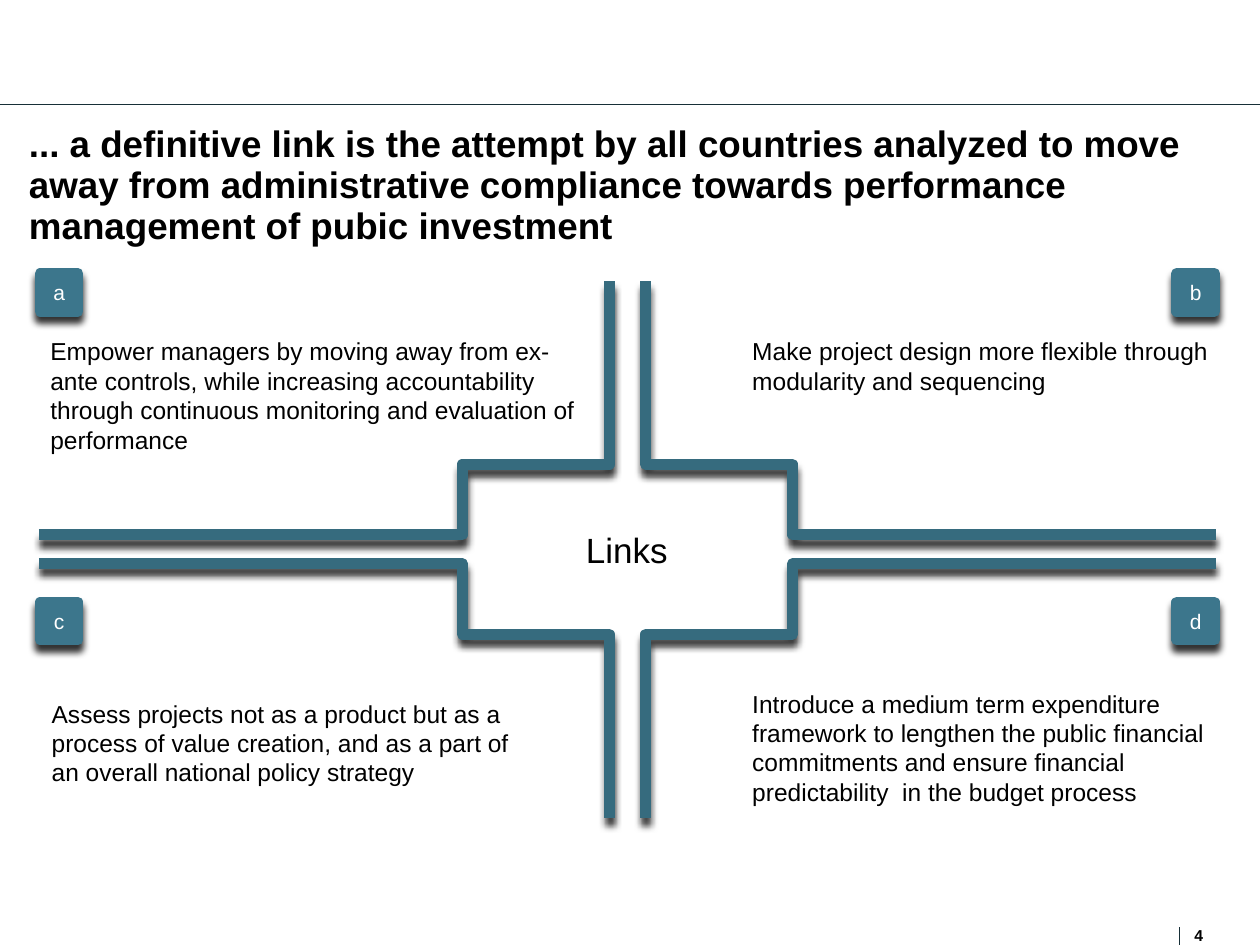
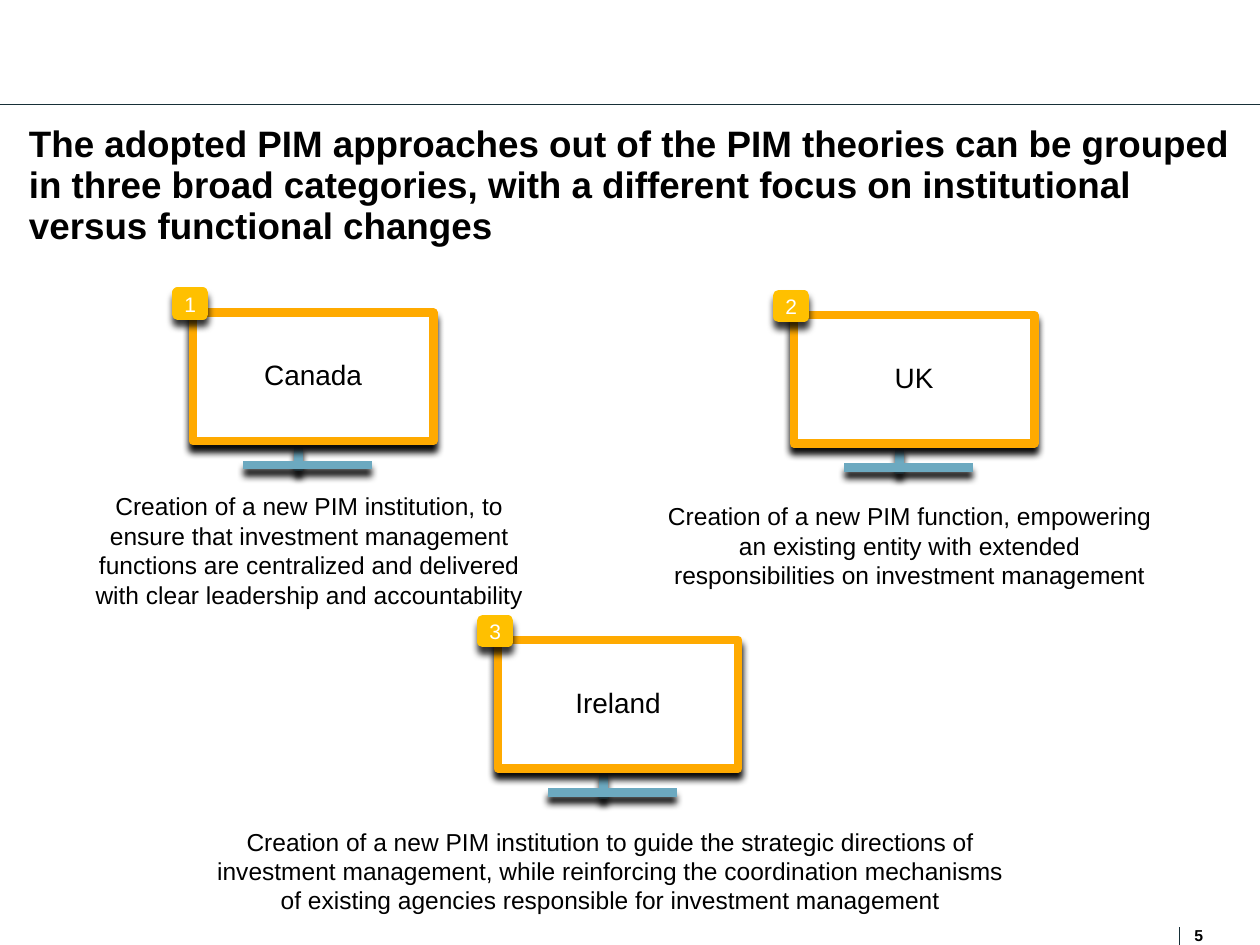
from dataclasses import dataclass

import pptx
import pptx.dml.color
import pptx.enum.shapes
import pptx.enum.text
import pptx.oxml
import pptx.oxml.ns
import pptx.util

ALIGN = pptx.enum.text.PP_ALIGN
ANCHOR = pptx.enum.text.MSO_ANCHOR
RECTANGLE = pptx.enum.shapes.MSO_SHAPE.RECTANGLE
STRAIGHT = pptx.enum.shapes.MSO_CONNECTOR.STRAIGHT


@dataclass(frozen=True)
class Theme:
    font: str = "Arial"
    ink: str = "000000"
    paper: str = "FFFFFF"
    rule: str = "172F37"
    teal: str = "366B7E"
    badge_teal: str = "3C768C"
    stand_blue: str = "6CA9C0"
    frame: str = "FFAA00"
    badge_amber: str = "FFC000"
    soft_black: str = "0D0D0D"
    title: float = 21
    hub: float = 20
    screen: float = 16
    body: float = 14
    badge: float = 12
    footer: float = 9
    hairline: float = 0.75
    medium: float = 4.75
    heavy: float = 6.25


THEME = Theme()


@dataclass(frozen=True)
class Box:
    """An area in grid cells; the slide is 100 columns by 75 rows."""
    left: float
    top: float
    width: float
    height: float

    def inner(self, left, top, width, height):
        return Box(self.left + left, self.top + top, width, height)

    def emu(self):
        return tuple(map(cells, (self.left, self.top, self.width, self.height)))


SLIDE = Box(0, 0, 100, 75)


def cells(count):
    return pptx.util.Inches(count / 10)


def rgb(colour):
    return pptx.dml.color.RGBColor.from_string(colour)


# ---- Drawing helpers ----

def set_line(line, colour, weight):
    line.color.rgb = rgb(colour)
    line.width = pptx.util.Pt(weight)


def set_effects(shape, shadow=None, opacity=100):
    """Replace the inherited shadow by a given one, or by none."""
    properties = shape._element.spPr
    for old in properties.findall(pptx.oxml.ns.qn("a:effectLst")):
        properties.remove(old)
    distance = pptx.util.Pt(4)
    drop = "" if shadow is None else (
        f'<a:outerShdw blurRad="{distance}" dist="{distance}" dir="5400000" '
        f'algn="t" rotWithShape="0"><a:srgbClr val="{shadow}">'
        f'<a:alpha val="{opacity * 1000}"/></a:srgbClr></a:outerShdw>')
    properties.append(pptx.oxml.parse_xml(
        f'<a:effectLst {pptx.oxml.ns.nsdecls("a")}>{drop}</a:effectLst>'))


def write(shape, text, size, colour=THEME.ink, bold=False, align=ALIGN.LEFT,
          anchor=ANCHOR.TOP, spacing=None):
    frame = shape.text_frame
    frame.word_wrap = True
    frame.vertical_anchor = anchor
    frame.margin_left = frame.margin_right = 0
    frame.margin_top = frame.margin_bottom = 0
    para = frame.paragraphs[0]
    para.text = text
    para.alignment = align
    para.line_spacing = spacing
    para.font.name = THEME.font
    para.font.size = pptx.util.Pt(size)
    para.font.bold = bold
    para.font.color.rgb = rgb(colour)


def add_text(page, box, text, size, **style):
    write(page.shapes.add_textbox(*box.emu()), text, size, **style)


def add_panel(page, box, fill, outline, weight, shadow, opacity):
    panel = page.shapes.add_shape(RECTANGLE, *box.emu())
    panel.fill.solid()
    panel.fill.fore_color.rgb = rgb(fill)
    set_line(panel.line, outline, weight)
    set_effects(panel, shadow, opacity)
    return panel


def add_badge(page, box, label, colour):
    badge = add_panel(page, box, colour, colour, THEME.heavy, THEME.ink, 80)
    write(badge, label, THEME.badge, colour=THEME.paper,
          align=ALIGN.CENTER, anchor=ANCHOR.MIDDLE)


def add_rule(page, box, colour, weight, shadow=None):
    """Draw a straight line across a box that has no width or no height."""
    rule = page.shapes.add_connector(
        STRAIGHT, cells(box.left), cells(box.top),
        cells(box.left + box.width), cells(box.top + box.height))
    set_line(rule.line, colour, weight)
    set_effects(rule, shadow)


# ---- Shared frame: footer, top rule and title ----

def add_page(deck, box, number, title):
    page = deck.slides.add_slide(deck.slide_layouts[6])
    add_rule(page, box.inner(93.6, 73.6, 0, 1.4), THEME.rule, THEME.hairline)
    add_rule(page, box.inner(0, 8.3, box.width, 0), THEME.rule, THEME.hairline)
    add_text(page, box.inner(94.8, 73.5, 1.5, 1.4), str(number),
             THEME.footer, bold=True)
    add_text(page, box.inner(2.3, 9.9, 95.6, 9), title, THEME.title,
             bold=True, spacing=0.93)
    return page


# ---- Four links around a hub ----

# Distance of each bend from the centre of the cross
BENDS = [(46.7, 1.15), (13.1, 1.15), (13.1, 6.75), (1.45, 6.75), (1.45, 21.3)]


def add_bracket(page, box, side, half):
    """Draw the bracket of one quadrant; side and half are -1 or 1."""
    middle_x = box.left + box.width / 2
    middle_y = box.top + box.height / 2
    points = [(cells(middle_x + side * across), cells(middle_y + half * down))
              for across, down in BENDS]
    builder = page.shapes.build_freeform(*points[0])
    builder.add_line_segments(points[1:], close=False)
    bracket = builder.convert_to_shape()
    bracket.fill.background()
    set_line(bracket.line, THEME.teal, THEME.heavy)
    bracket.line._get_or_add_ln().append(pptx.oxml.parse_xml(
        f'<a:round {pptx.oxml.ns.nsdecls("a")}/>'))
    set_effects(bracket, THEME.soft_black, 80)


def add_links(page, box, hub, quadrants):
    for half in (-1, 1):
        for side in (-1, 1):
            add_bracket(page, box, side, half)
    add_text(page, box.inner(37.6, 19.6, 18.1, 3.4), hub, THEME.hub,
             align=ALIGN.CENTER, anchor=ANCHOR.MIDDLE)
    for index, (label, text, left, top, width) in enumerate(quadrants):
        row, column = divmod(index, 2)
        add_badge(page, box.inner(0.1 + column * 90.2, -0.6 + row * 26.1, 3, 3),
                  label, THEME.badge_teal)
        add_text(page, box.inner(left, top, width, 9.4), text, THEME.body)


# ---- A country on a monitor, with its approach below ----

def add_monitor(page, box, number, country):
    add_rule(page, box.inner(8.4, 10.3, 0, 2.3), THEME.stand_blue,
             THEME.medium, THEME.soft_black)
    add_rule(page, box.inner(4, 12.1, 10.2, 0), THEME.stand_blue,
             THEME.medium, THEME.soft_black)
    screen = add_panel(page, box, THEME.paper, THEME.frame, THEME.medium,
                       THEME.soft_black, 100)
    write(screen, country, THEME.screen, align=ALIGN.CENTER,
          anchor=ANCHOR.MIDDLE, spacing=0.9)
    add_badge(page, box.inner(-1.2, -1.55, 2, 1.7), str(number),
              THEME.badge_amber)


def add_approaches(page, approaches):
    for number, (country, screen, text, caption) in enumerate(approaches, 1):
        add_text(page, caption, text, THEME.body, align=ALIGN.CENTER)
        add_monitor(page, screen, number, country)


# ---- Content ----

# Label, text, then left, top and width of the text within the cross
QUADRANTS = [
    ("a", "Empower managers by moving away from ex-ante controls, while "
          "increasing accountability through continuous monitoring and "
          "evaluation of performance", 0.9, 4.4, 41.7),
    ("b", "Make project design more flexible through modularity and "
          "sequencing", 56.6, 4.4, 40.1),
    ("c", "Assess projects not as a product but as a process of value "
          "creation, and as a part of an overall national policy strategy",
     1, 33.15, 38.2),
    ("d", "Introduce a medium term expenditure framework to lengthen the "
          "public financial commitments and ensure financial "
          "predictability  in the budget process", 56.6, 32.35, 38.2),
]

APPROACHES = [
    ("Canada", Box(15.3, 24.8, 19.1, 10.2),
     "Creation of a new PIM institution, to ensure that investment "
     "management functions are centralized and delivered with clear "
     "leadership and accountability", Box(6.2, 39, 36.7, 9.4)),
    ("UK", Box(63, 25, 19.1, 10.2),
     "Creation of a new PIM function, empowering an existing entity with "
     "extended responsibilities on investment management",
     Box(52.3, 39.8, 39.8, 7.1)),
    ("Ireland", Box(39.5, 50.8, 19.1, 10.2),
     "Creation of a new PIM institution to guide the strategic directions "
     "of investment management, while reinforcing the coordination "
     "mechanisms of existing agencies responsible for investment management",
     Box(16.4, 65.6, 64.1, 7.1)),
]


def main():
    deck = pptx.Presentation()
    deck.slide_width = cells(SLIDE.width)
    deck.slide_height = cells(SLIDE.height)

    page = add_page(deck, SLIDE, 4,
                    "... a definitive link is the attempt by all countries "
                    "analyzed to move away from administrative compliance "
                    "towards performance management of pubic investment")
    add_links(page, Box(3.1, 22.3, 93.4, 42.6), "Links", QUADRANTS)

    page = add_page(deck, SLIDE, 5,
                    "The adopted PIM approaches out of the PIM theories can "
                    "be grouped in three broad categories, with a different "
                    "focus on institutional versus functional changes")
    add_approaches(page, APPROACHES)

    deck.save("out.pptx")


if __name__ == "__main__":
    main()
